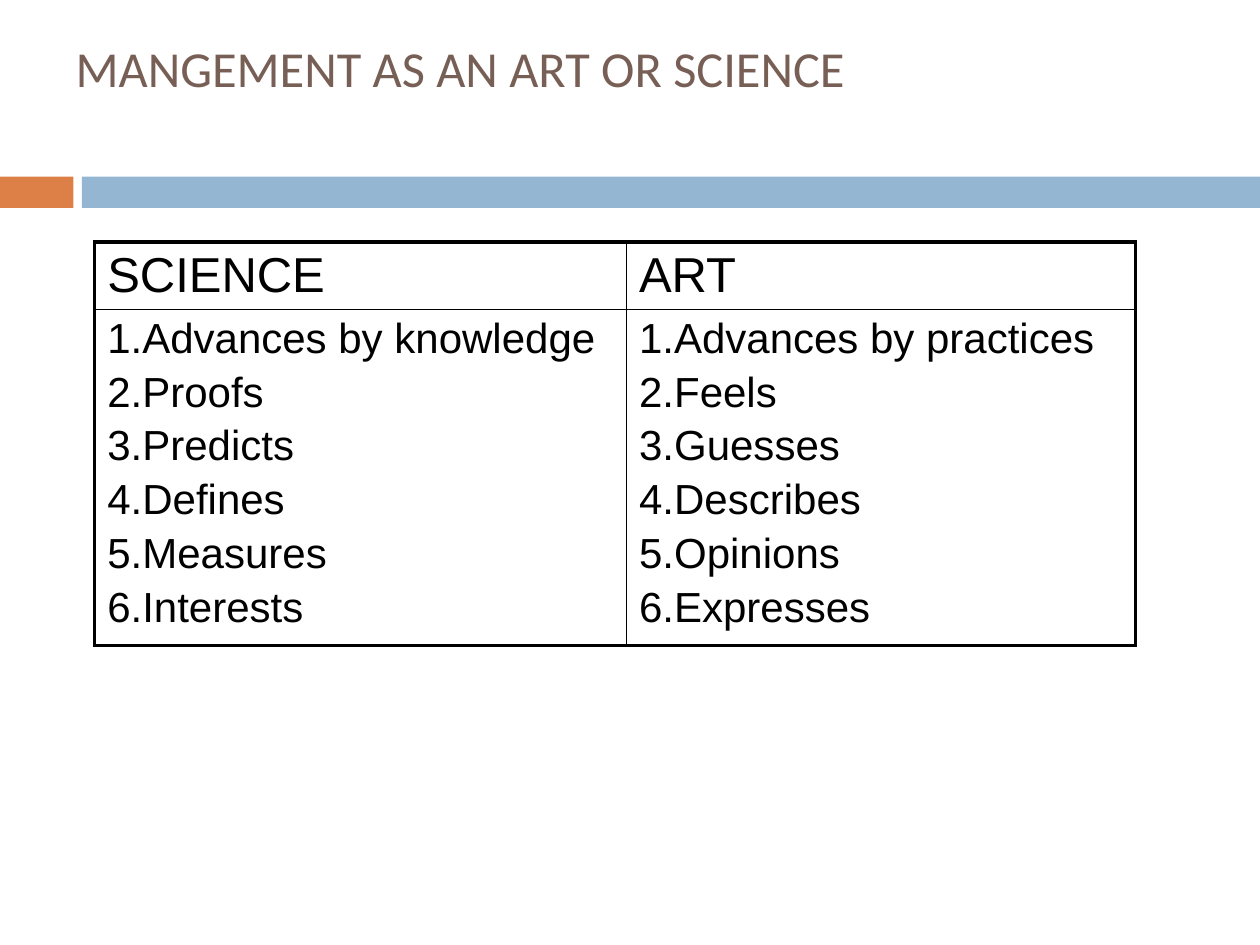
import lxml.etree
import pptx
import pptx.dml.color
import pptx.enum.shapes
import pptx.enum.text
import pptx.oxml.ns
import pptx.util
from pptx.util import Cm

ORANGE = pptx.dml.color.RGBColor(0xDD, 0x80, 0x47)
BLUE = pptx.dml.color.RGBColor(0x94, 0xB6, 0xD2)
BROWN = pptx.dml.color.RGBColor(0x77, 0x5F, 0x55)
BLACK = pptx.dml.color.RGBColor(0, 0, 0)

OUTER_BORDER = 2.25
INNER_BORDER = 1


def style_paragraph(para, font_name, size, color):
    para.alignment = pptx.enum.text.PP_ALIGN.LEFT
    for span in para.runs:
        span.font.name = font_name
        span.font.size = pptx.util.Pt(size)
        span.font.color.rgb = color


def set_border(cell, side, width):
    line = lxml.etree.SubElement(cell._tc.get_or_add_tcPr(), pptx.oxml.ns.qn("a:" + side))
    line.set("w", str(pptx.util.Pt(width)))
    fill = lxml.etree.SubElement(line, pptx.oxml.ns.qn("a:solidFill"))
    lxml.etree.SubElement(fill, pptx.oxml.ns.qn("a:srgbClr")).set("val", str(BLACK))


deck = pptx.Presentation()
deck.slide_width = Cm(25.4)
deck.slide_height = Cm(19.05)
page = deck.slides.add_slide(deck.slide_layouts[5])

for left, width, color in [(0, 1.48, ORANGE), (1.65, 23.75, BLUE)]:
    band = page.shapes.add_shape(
        pptx.enum.shapes.MSO_SHAPE.RECTANGLE, Cm(left), Cm(3.56), Cm(width), Cm(0.63)
    )
    band.shadow.inherit = False
    band.fill.solid()
    band.fill.fore_color.rgb = color
    band.line.fill.background()

title = page.shapes.title
title.left, title.top, title.width, title.height = Cm(1.27), Cm(0.76), Cm(22.86), Cm(2.41)
title.text_frame.text = "MANGEMENT AS AN ART OR SCIENCE\v"
title.text_frame.vertical_anchor = pptx.enum.text.MSO_ANCHOR.MIDDLE
title.text_frame.auto_size = pptx.enum.text.MSO_AUTO_SIZE.NONE
title_para = title.text_frame.paragraphs[0]
title_para.font.size = pptx.util.Pt(28.8)
style_paragraph(title_para, "Calibri", 28.8, BROWN)

columns = [
    ("SCIENCE", ["Advances by knowledge", "Proofs", "Predicts", "Defines", "Measures", "Interests"]),
    ("ART", ["Advances by practices", "Feels", "Guesses", "Describes", "Opinions", "Expresses"]),
]
table = page.shapes.add_table(2, 2, Cm(1.91), Cm(4.88), Cm(20.98), Cm(8.13)).table
table.first_row = False
table.horz_banding = False
for column, width in zip(table.columns, [10.72, 10.26]):
    column.width = Cm(width)
for row, height in zip(table.rows, [1.35, 6.78]):
    row.height = Cm(height)

for column_index, (heading, points) in enumerate(columns):
    numbered = [f"{number}.{point}" for number, point in enumerate(points, 1)]
    for row_index, (lines, size) in enumerate([([heading], 28), (numbered, 24)]):
        cell = table.cell(row_index, column_index)
        cell.text_frame.text = "\n".join(lines)
        for para_index, para in enumerate(cell.text_frame.paragraphs):
            style_paragraph(para, "Arial", size, BLACK)
            para.space_before = pptx.util.Pt(3.9 if para_index else 0)
        outer_sides = ["lnR" if column_index else "lnL", "lnB" if row_index else "lnT"]
        for side in ["lnL", "lnR", "lnT", "lnB"]:
            set_border(cell, side, OUTER_BORDER if side in outer_sides else INNER_BORDER)
        cell.fill.background()

deck.save("out.pptx")
